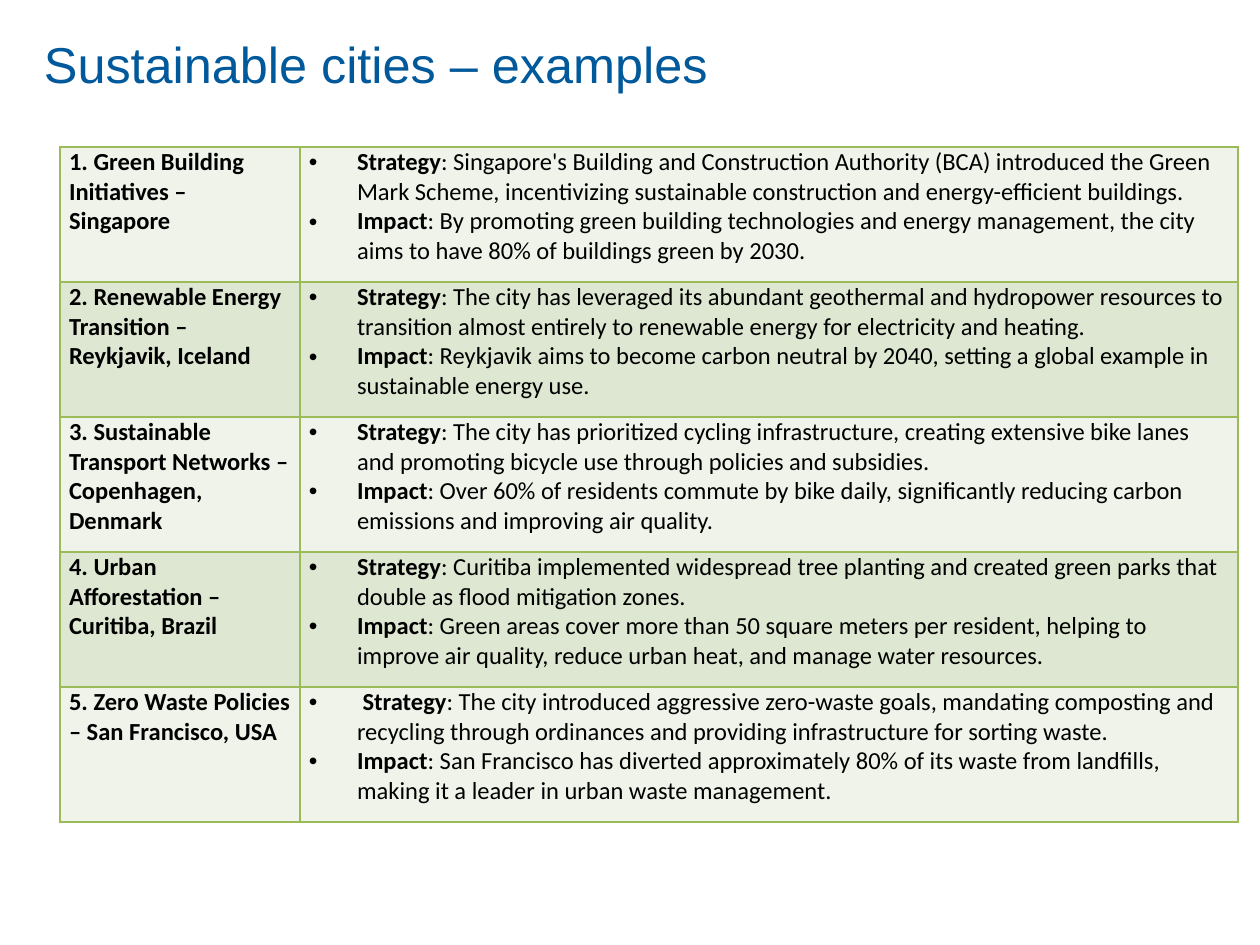
from lxml import etree
from pptx import Presentation
from pptx.dml.color import RGBColor
from pptx.enum.text import MSO_ANCHOR
from pptx.oxml.ns import qn
from pptx.util import Emu, Pt

TOP = MSO_ANCHOR.TOP
PX = 914400 // 126

TITLE = "Sustainable cities – examples"
# City heading, then (label, text) points
CITIES = [
    ("1. Green Building Initiatives – Singapore", [
        ("Strategy", ": Singapore's Building and Construction Authority (BCA) introduced the Green "
         "Mark Scheme, incentivizing sustainable construction and energy-efficient buildings."),
        ("Impact", ": By promoting green building technologies and energy management, the city "
         "aims to have 80% of buildings green by 2030.")]),
    ("2. Renewable Energy Transition – Reykjavik, Iceland", [
        ("Strategy", ": The city has leveraged its abundant geothermal and hydropower resources to "
         "transition almost entirely to renewable energy for electricity and heating."),
        ("Impact", ": Reykjavik aims to become carbon neutral by 2040, setting a global example in "
         "sustainable energy use.")]),
    ("3. Sustainable Transport Networks – Copenhagen, Denmark", [
        ("Strategy", ": The city has prioritized cycling infrastructure, creating extensive bike lanes "
         "and promoting bicycle use through policies and subsidies."),
        ("Impact", ": Over 60% of residents commute by bike daily, significantly reducing carbon "
         "emissions and improving air quality.")]),
    ("4. Urban Afforestation – Curitiba, Brazil", [
        ("Strategy", ": Curitiba implemented widespread tree planting and created green parks that "
         "double as flood mitigation zones."),
        ("Impact", ": Green areas cover more than 50 square meters per resident, helping to "
         "improve air quality, reduce urban heat, and manage water resources.")]),
    ("5. Zero Waste Policies – San Francisco, USA", [
        (" Strategy", ": The city introduced aggressive zero-waste goals, mandating composting and "
         "recycling through ordinances and providing infrastructure for sorting waste."),
        ("Impact", ": San Francisco has diverted approximately 80% of its waste from landfills, "
         "making it a leader in urban waste management.")]),
]

TITLE_BOX = (44, 33, 709, 164)
TABLE_LEFT, TABLE_TOP = 60, 147
COLUMN_WIDTHS = (240, 938)
ROW_HEIGHT = 135
BAND_FILLS = ("EFF3EA", "DEE7D1")
BORDER = "9BBB59"
INDENT = 48
TITLE_FONT = {"name": "Arial", "size": Pt(28.8)}
CELL_FONT = {"name": "Calibri", "size": Pt(14)}
CELL_FORMAT = {"margin_left": Emu(9 * PX), "margin_right": Emu(9 * PX),
               "margin_top": 0, "margin_bottom": 0, "vertical_anchor": TOP}
BOX_FORMAT = {"margin_left": 0, "margin_right": 0, "margin_top": 0, "margin_bottom": 0,
              "vertical_anchor": TOP, "word_wrap": True}


def px(value):
    return Emu(value * PX)


def color(value):
    return RGBColor.from_string(value)


def apply(target, values):
    for name, value in values.items():
        setattr(target, name, value)


def add_span(para, text, font, ink, bold=False):
    span = para.add_run()
    span.text = text
    apply(span.font, {**font, "bold": bold})
    span.font.color.rgb = color(ink)


def add_bullet(para):
    props = para._p.get_or_add_pPr()
    props.set("marL", str(px(INDENT)))
    props.set("indent", str(-px(INDENT)))
    etree.SubElement(props, qn("a:buFont"), typeface="Arial")
    etree.SubElement(props, qn("a:buChar"), char="•")


def style_cell(cell, fill):
    apply(cell, CELL_FORMAT)
    props = cell._tc.get_or_add_tcPr()
    for side in ("lnL", "lnR", "lnT", "lnB"):
        line = etree.SubElement(props, qn(f"a:{side}"), w=str(Pt(1)))
        solid = etree.SubElement(line, qn("a:solidFill"))
        etree.SubElement(solid, qn("a:srgbClr"), val=BORDER)
    cell.fill.solid()
    cell.fill.fore_color.rgb = color(fill)


def main():
    deck = Presentation()
    deck.slide_width, deck.slide_height = px(1260), px(945)
    page = deck.slides.add_slide(deck.slide_layouts[6])

    # Title
    box = page.shapes.add_textbox(*map(px, TITLE_BOX))
    apply(box.text_frame, BOX_FORMAT)
    add_span(box.text_frame.paragraphs[0], TITLE, TITLE_FONT, "00599A")

    # Table of cities
    table = page.shapes.add_table(
        len(CITIES), len(COLUMN_WIDTHS), px(TABLE_LEFT), px(TABLE_TOP),
        px(sum(COLUMN_WIDTHS)), px(ROW_HEIGHT * len(CITIES))).table
    apply(table, {"first_row": False, "horz_banding": False})
    for column, width in zip(table.columns, COLUMN_WIDTHS):
        column.width = px(width)

    for index, (heading, points) in enumerate(CITIES):
        table.rows[index].height = px(ROW_HEIGHT)
        name_cell, points_cell = table.rows[index].cells
        for cell in (name_cell, points_cell):
            style_cell(cell, BAND_FILLS[index % 2])
        add_span(name_cell.text_frame.paragraphs[0], heading, CELL_FONT, "000000", True)
        frame = points_cell.text_frame
        for number, (label, text) in enumerate(points):
            para = frame.add_paragraph() if number else frame.paragraphs[0]
            add_bullet(para)
            add_span(para, label, CELL_FONT, "000000", True)
            add_span(para, text, CELL_FONT, "000000")

    deck.save("out.pptx")


if __name__ == "__main__":
    main()
